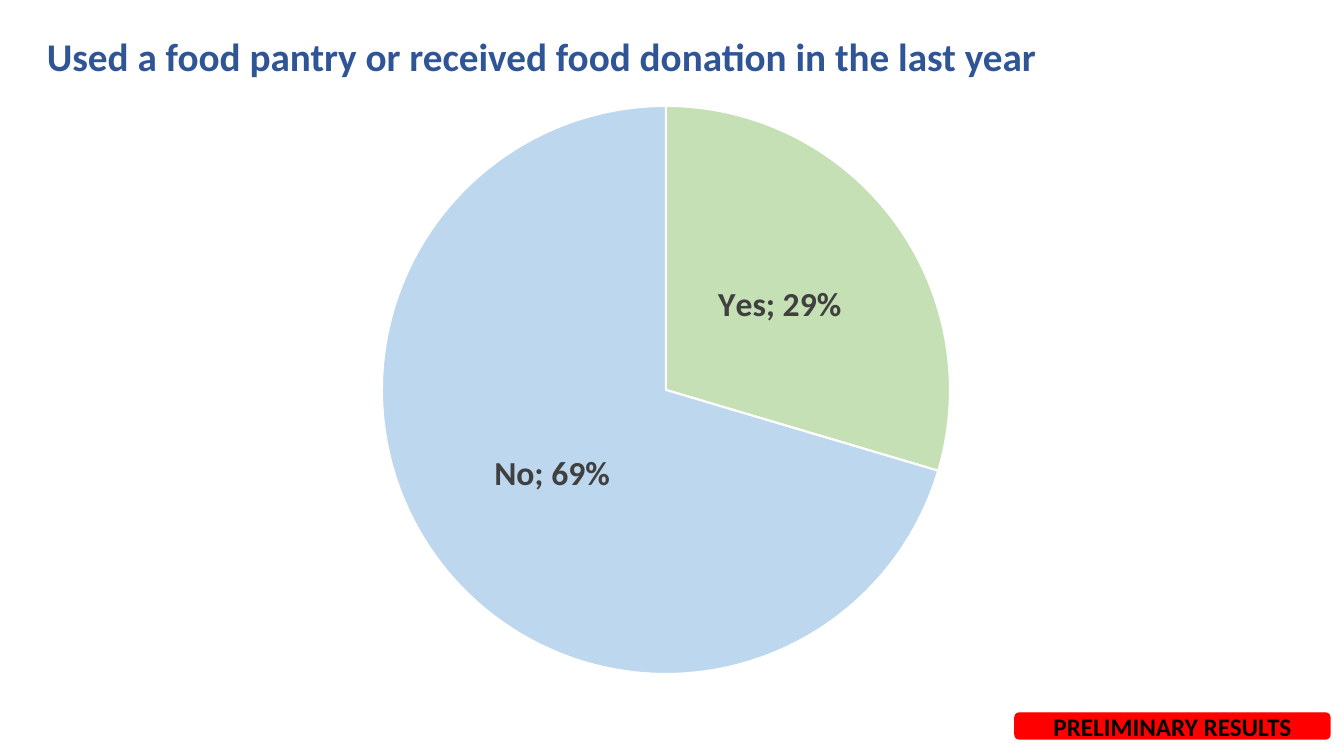
from lxml.etree import SubElement
from pptx import Presentation
from pptx.chart.data import CategoryChartData
from pptx.dml.color import RGBColor
from pptx.enum.chart import XL_CHART_TYPE, XL_LABEL_POSITION
from pptx.enum.shapes import MSO_SHAPE
from pptx.enum.text import MSO_ANCHOR, MSO_AUTO_SIZE, PP_ALIGN
from pptx.oxml.ns import qn
from pptx.util import Pt

EMU_PER_PX = 914400 / 100.8
FONT = "Calibri"
SLICES = {"Yes": (0.29, "C5E0B4"), "No": (0.69, "BDD7EE")}


def px(*lengths):
    return [round(length * EMU_PER_PX) for length in lengths]


def color(hex_code):
    return RGBColor.from_string(hex_code)


def format_font(font, size, hex_code, bold=True):
    values = {"name": FONT, "size": Pt(size), "bold": bold}
    for name, value in values.items():
        setattr(font, name, value)
    font.color.rgb = color(hex_code)


def write_line(shape, text, size, hex_code, align, frame_format):
    """Put one formatted line of text into a shape."""
    frame = shape.text_frame
    for name, value in frame_format.items():
        setattr(frame, name, value)
    para = frame.paragraphs[0]
    para.alignment = align
    span = para.add_run()
    span.text = text
    format_font(span.font, size, hex_code)


def add_title(page, text, bounds):
    box = page.shapes.add_textbox(*px(*bounds))
    write_line(box, text, 28, "2F5597", PP_ALIGN.LEFT,
               {"word_wrap": False, "auto_size": MSO_AUTO_SIZE.SHAPE_TO_FIT_TEXT})


def add_badge(page, text, bounds, fill):
    badge = page.shapes.add_shape(MSO_SHAPE.ROUNDED_RECTANGLE, *px(*bounds))
    badge.shadow.inherit = False
    badge.fill.solid()
    badge.fill.fore_color.rgb = color(fill)
    badge.line.color.rgb = color(fill)
    badge.line.width = Pt(1)
    write_line(badge, text, 18, "000000", PP_ALIGN.CENTER,
               {"word_wrap": True, "vertical_anchor": MSO_ANCHOR.MIDDLE})


def place_plot(chart, **fractions):
    """Fix the inner plot area as fractions of the chart frame."""
    plot_area = chart.element.find(".//" + qn("c:plotArea"))
    for old_layout in plot_area.findall(qn("c:layout")):
        plot_area.remove(old_layout)
    layout = SubElement(plot_area, qn("c:layout"))
    plot_area.insert(0, layout)
    manual = SubElement(layout, qn("c:manualLayout"))
    settings = {"layoutTarget": "inner", "xMode": "edge", "yMode": "edge", **fractions}
    for name, value in settings.items():
        SubElement(manual, qn(f"c:{name}")).set("val", str(value))


def label_slices(plot):
    plot.has_data_labels = True
    labels = plot.data_labels
    values = {
        "show_value": True,
        "show_category_name": True,
        "show_percentage": False,
        "number_format": "0%",
        "number_format_is_linked": False,
        "position": XL_LABEL_POSITION.CENTER,
    }
    for name, value in values.items():
        setattr(labels, name, value)
    format_font(labels.font, 24, "404040")
    last_flag = plot.series[0]._element.getparent().find(
        f"{qn('c:dLbls')}/{qn('c:showBubbleSize')}")
    separator = SubElement(last_flag.getparent(), qn("c:separator"))
    separator.text = "; "
    last_flag.addnext(separator)


def add_pie(page, slices, bounds):
    data = CategoryChartData(number_format="0%")
    data.categories = list(slices)
    data.add_series("Series 1", [value for value, _ in slices.values()])
    chart = page.shapes.add_chart(XL_CHART_TYPE.PIE, *px(*bounds), data).chart
    chart.has_legend = False
    chart.has_title = False
    format_font(chart.font, 10, "000000", bold=False)
    plot = chart.plots[0]
    plot.vary_by_categories = True
    for index, (_, fill) in enumerate(slices.values()):
        look = plot.series[0].points[index].format
        look.fill.solid()
        look.fill.fore_color.rgb = color(fill)
        look.line.color.rgb = color("FFFFFF")
        look.line.width = Pt(1.5)
    label_slices(plot)
    place_plot(chart, x=0.18, y=0.02, w=0.64, h=0.95)


def main():
    deck = Presentation()
    deck.slide_width, deck.slide_height = px(1344, 756)
    page = deck.slides.add_slide(deck.slide_layouts[6])
    add_pie(page, SLICES, (218, 94, 896, 598))
    add_title(page, "Used a food pantry or received food donation in the last year",
              (37, 27, 1021, 58))
    add_badge(page, "PRELIMINARY RESULTS", (1015, 713, 315, 26), "FF0000")
    deck.save("out.pptx")


if __name__ == "__main__":
    main()
